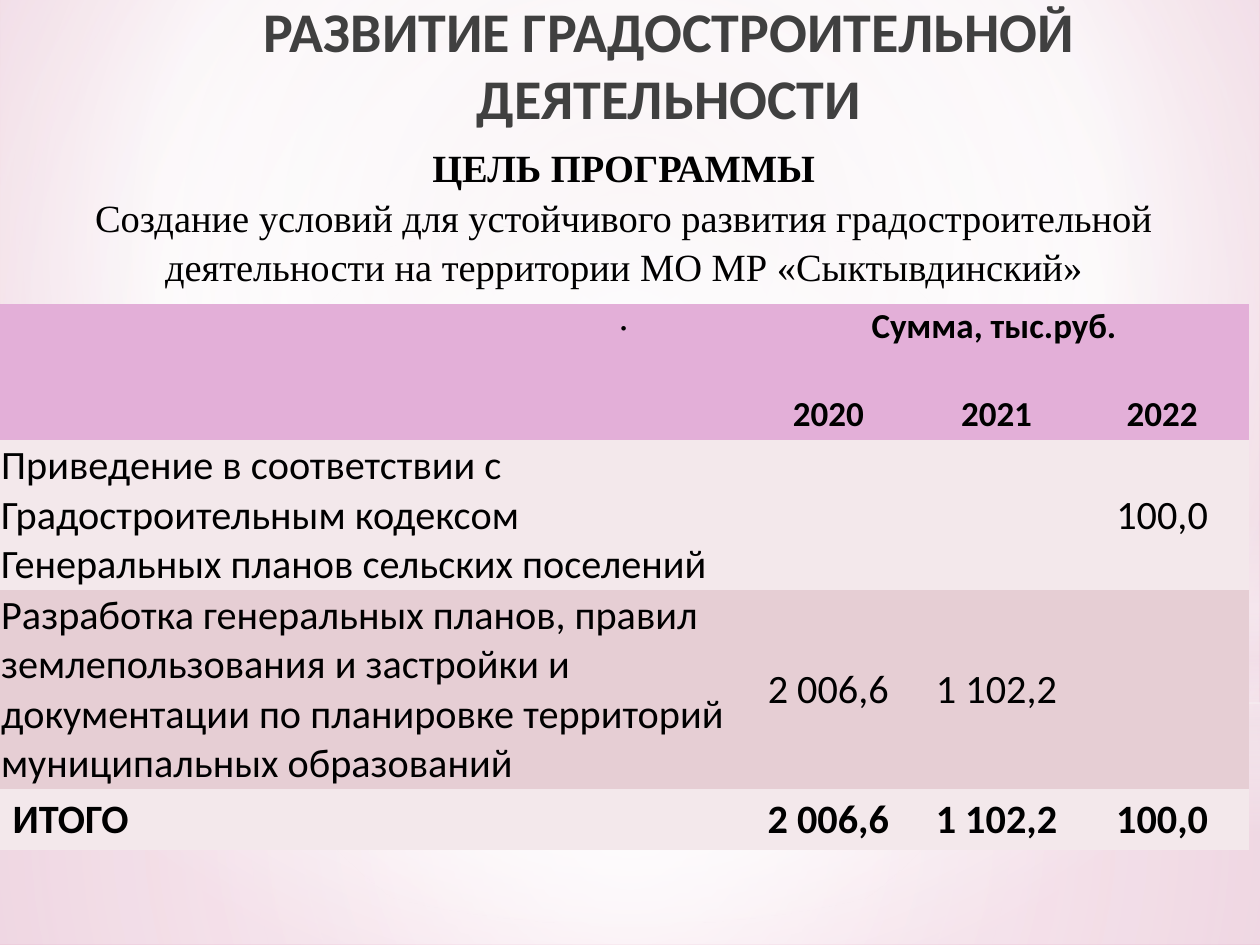
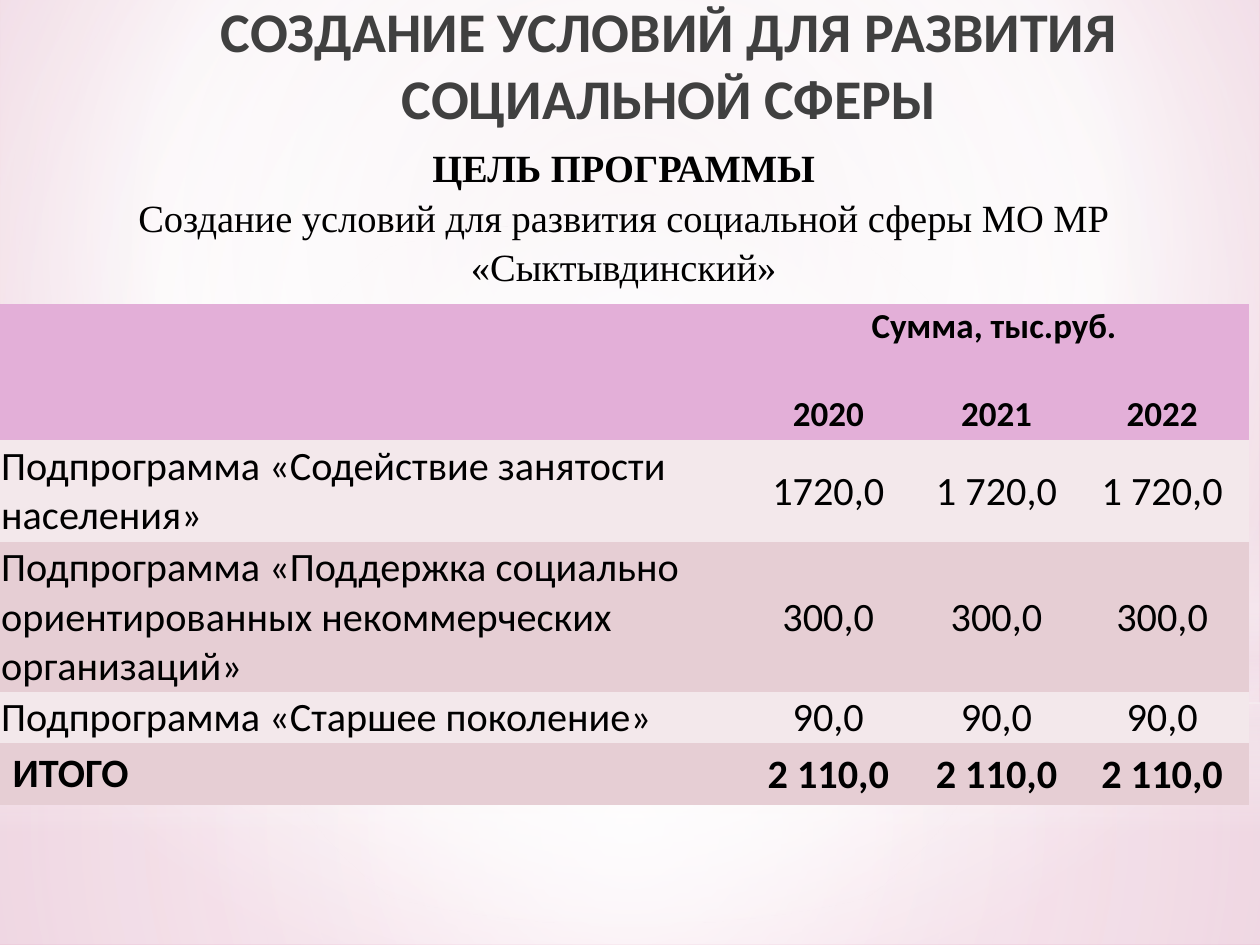
from dataclasses import dataclass

from lxml import etree
from pptx import Presentation
from pptx.dml.color import RGBColor
from pptx.enum.shapes import MSO_SHAPE
from pptx.enum.text import MSO_ANCHOR, PP_ALIGN
from pptx.oxml.ns import qn
from pptx.util import Inches, Pt

RECTANGLE, ELLIPSE = MSO_SHAPE.RECTANGLE, MSO_SHAPE.OVAL
LEFT, CENTER = PP_ALIGN.LEFT, PP_ALIGN.CENTER
TOP, MIDDLE = MSO_ANCHOR.TOP, MSO_ANCHOR.MIDDLE
PLAIN_TABLE_STYLE = "{2D5ABB26-0587-4C30-8999-92F81FD0307C}"


@dataclass(frozen=True)
class Theme:
    sans: str = "Calibri"
    serif: str = "Times New Roman"
    title_color: str = "404040"
    text_color: str = "000000"
    header_fill: str = "E3AFD8"
    light_band: str = "F3E8EB"
    dark_band: str = "E6CED4"
    white: str = "FFFFFF"
    blush: str = "F4E7ED"
    backdrop_center: str = "EDDAE2"
    backdrop_edge: str = "E09DBC"
    title_size: int = 32
    goal_size: int = 22
    header_size: int = 20
    body_size: int = 23


THEME = Theme()


@dataclass(frozen=True)
class Stop:
    position: int
    color: str
    opacity: int = 100


@dataclass(frozen=True)
class Gradient:
    """Circular around the focus insets (percent), or vertical without them."""
    stops: tuple[Stop, ...]
    focus: tuple[int, int, int, int] | None = (50, 50, 50, 50)


@dataclass(frozen=True)
class Glow:
    preset: MSO_SHAPE
    top: float
    height: float
    gradient: Gradient


@dataclass(frozen=True)
class Expense:
    label: str
    amounts: tuple[str, str, str]
    height: float


@dataclass(frozen=True)
class Program:
    title: str
    goal: tuple[str, ...]
    goal_height: float
    expenses: tuple[Expense, ...]
    totals: tuple[str, str, str]


WHITE, BLUSH = THEME.white, THEME.blush
BACKDROP = Gradient((Stop(0, THEME.backdrop_center), Stop(60, WHITE),
                     Stop(100, THEME.backdrop_edge)), (20, 10, 20, 60))
GLOWS = (
    Glow(RECTANGLE, 5.58, 1.92,
         Gradient((Stop(0, WHITE, 91), Stop(37, WHITE, 76), Stop(100, BLUSH, 79)))),
    Glow(RECTANGLE, 0, 5.58,
         Gradient((Stop(0, WHITE, 89), Stop(48, WHITE, 62), Stop(100, BLUSH, 79)))),
    Glow(RECTANGLE, 4.12, 2.5,
         Gradient((Stop(0, WHITE, 0), Stop(29, WHITE, 30), Stop(45, BLUSH, 40),
                   Stop(55, WHITE, 26), Stop(65, BLUSH, 60), Stop(100, WHITE, 0)), None)),
    Glow(ELLIPSE, 1.75, 5.58, Gradient((Stop(0, WHITE), Stop(56, WHITE, 0)))),
)

SLIDE_WIDTH, SLIDE_HEIGHT = 10, 7.5
TABLE_TOP = 2.41
COLUMN_WIDTHS = (5.87, 1.41, 1.26, 1.37)
HEADER_HEIGHTS = (0.67, 0.41)
TOTAL_HEIGHT = 0.49
YEARS = ("2020", "2021", "2022")

PROGRAMS = (
    Program(
        "РАЗВИТИЕ ГРАДОСТРОИТЕЛЬНОЙ ДЕЯТЕЛЬНОСТИ",
        ("Создание условий для устойчивого развития градостроительной "
         "деятельности на территории МО МР «Сыктывдинский»", "."),
        1.58,
        (Expense("Приведение в соответствии с Градостроительным кодексом "
                 "Генеральных планов сельских поселений", ("", "", "100,0"), 1.19),
         Expense("Разработка генеральных планов, правил землепользования и застройки "
                 "и документации по планировке территорий муниципальных образований",
                 ("2 006,6", "1 102,2", ""), 1.58)),
        ("2 006,6", "1 102,2", "100,0"),
    ),
    Program(
        "СОЗДАНИЕ УСЛОВИЙ ДЛЯ РАЗВИТИЯ СОЦИАЛЬНОЙ СФЕРЫ",
        ("Создание условий для развития социальной сферы МО МР «Сыктывдинский»",),
        1.21,
        (Expense("Подпрограмма «Содействие занятости населения»",
                 ("1720,0", "1 720,0", "1 720,0"), 0.81),
         Expense("Подпрограмма «Поддержка социально ориентированных "
                 "некоммерческих организаций»", ("300,0",) * 3, 1.19),
         Expense("Подпрограмма «Старшее поколение»", ("90,0",) * 3, 0.41)),
        ("2 110,0",) * 3,
    ),
)


def apply_gradient(fill, owner, gradient: Gradient) -> None:
    """Make the fill a gradient and write its stops into the owner's XML."""
    fill.gradient()
    node = next(owner.iter(qn("a:gradFill")))
    for child in list(node):
        node.remove(child)
    stops = etree.SubElement(node, qn("a:gsLst"))
    for stop in gradient.stops:
        mark = etree.SubElement(stops, qn("a:gs"), pos=str(stop.position * 1000))
        color = etree.SubElement(mark, qn("a:srgbClr"), val=stop.color)
        if stop.opacity < 100:
            etree.SubElement(color, qn("a:alpha"), val=str(stop.opacity * 1000))
    if gradient.focus is None:
        etree.SubElement(node, qn("a:lin"), ang="5400000", scaled="0")
    else:
        circle = etree.SubElement(node, qn("a:path"), path="circle")
        insets = {side: str(inset * 1000) for side, inset in zip("ltrb", gradient.focus)}
        etree.SubElement(circle, qn("a:fillToRect"), **insets)


def style(paragraph, font: str, size: int, color: str, bold: bool, align=CENTER) -> None:
    paragraph.alignment = align
    for run in paragraph.runs:
        run.font.name = font
        run.font.size = Pt(size)
        run.font.bold = bold
        run.font.color.rgb = RGBColor.from_string(color)


def draw_backdrop(slide) -> None:
    apply_gradient(slide.background.fill, slide.element, BACKDROP)
    for glow in GLOWS:
        shape = slide.shapes.add_shape(glow.preset, 0, Inches(glow.top),
                                       Inches(SLIDE_WIDTH), Inches(glow.height))
        shape.shadow.inherit = False
        shape.line.fill.background()
        apply_gradient(shape.fill, shape.element, glow.gradient)


def add_text(slide, left: float, top: float, width: float, height: float, text: str):
    box = slide.shapes.add_textbox(Inches(left), Inches(top), Inches(width), Inches(height))
    box.text_frame.word_wrap = True
    box.text_frame.text = text
    return box.text_frame


def draw_title(slide, title: str) -> None:
    frame = add_text(slide, 0.59, -0.08, 9.44, 0.99, title)
    style(frame.paragraphs[0], THEME.sans, THEME.title_size, THEME.title_color, True)


def draw_goal(slide, program: Program) -> None:
    frame = add_text(slide, -0.05, 1.07, 10, program.goal_height,
                     "\n".join(("ЦЕЛЬ ПРОГРАММЫ", *program.goal)))
    for index, paragraph in enumerate(frame.paragraphs):
        paragraph.line_spacing = 1.07
        style(paragraph, THEME.serif, THEME.goal_size, THEME.text_color, index == 0)


def fill_cell(cell, text: str, size: int, bold: bool, align=CENTER, anchor=MIDDLE,
              tight: bool = True) -> None:
    cell.text = text
    cell.vertical_anchor = anchor
    if tight and text:
        cell.margin_left = cell.margin_right = cell.margin_top = Inches(0.01)
        cell.margin_bottom = 0
    style(cell.text_frame.paragraphs[0], THEME.sans, size, THEME.text_color, bold, align)


def draw_budget(slide, program: Program) -> None:
    expenses = (*program.expenses, Expense("ИТОГО", program.totals, TOTAL_HEIGHT))
    heights = (*HEADER_HEIGHTS, *(expense.height for expense in expenses))
    frame = slide.shapes.add_table(len(heights), len(COLUMN_WIDTHS), 0, Inches(TABLE_TOP),
                                   Inches(sum(COLUMN_WIDTHS)), Inches(sum(heights)))
    next(frame.element.iter(qn("a:tableStyleId"))).text = PLAIN_TABLE_STYLE
    budget = frame.table
    budget.first_row = budget.horz_banding = False
    for column, width in zip(budget.columns, COLUMN_WIDTHS):
        column.width = Inches(width)

    bands = (THEME.light_band, THEME.dark_band)
    header_rows = len(HEADER_HEIGHTS)
    for index, (row, height) in enumerate(zip(budget.rows, heights)):
        row.height = Inches(height)
        color = THEME.header_fill if index < header_rows else bands[index % 2]
        for cell in row.cells:
            cell.fill.solid()
            cell.fill.fore_color.rgb = RGBColor.from_string(color)

    budget.cell(0, 0).merge(budget.cell(1, 0))
    budget.cell(0, 1).merge(budget.cell(0, 3))
    fill_cell(budget.cell(0, 1), "Сумма, тыс.руб.", THEME.header_size, True, anchor=TOP)
    for column, year in enumerate(YEARS, 1):
        fill_cell(budget.cell(1, column), year, THEME.header_size, True)

    for row, expense in enumerate(expenses, header_rows):
        total = row == len(heights) - 1
        fill_cell(budget.cell(row, 0), expense.label, THEME.body_size, total, LEFT,
                  TOP if total else MIDDLE, tight=not total)
        for column, amount in enumerate(expense.amounts, 1):
            fill_cell(budget.cell(row, column), amount, THEME.body_size, total)


def main() -> None:
    deck = Presentation()
    deck.slide_width, deck.slide_height = Inches(SLIDE_WIDTH), Inches(SLIDE_HEIGHT)
    blank = deck.slide_layouts[6]
    for program in PROGRAMS:
        slide = deck.slides.add_slide(blank)
        draw_backdrop(slide)
        draw_title(slide, program.title)
        draw_budget(slide, program)
        draw_goal(slide, program)
    deck.save("out.pptx")


if __name__ == "__main__":
    main()
